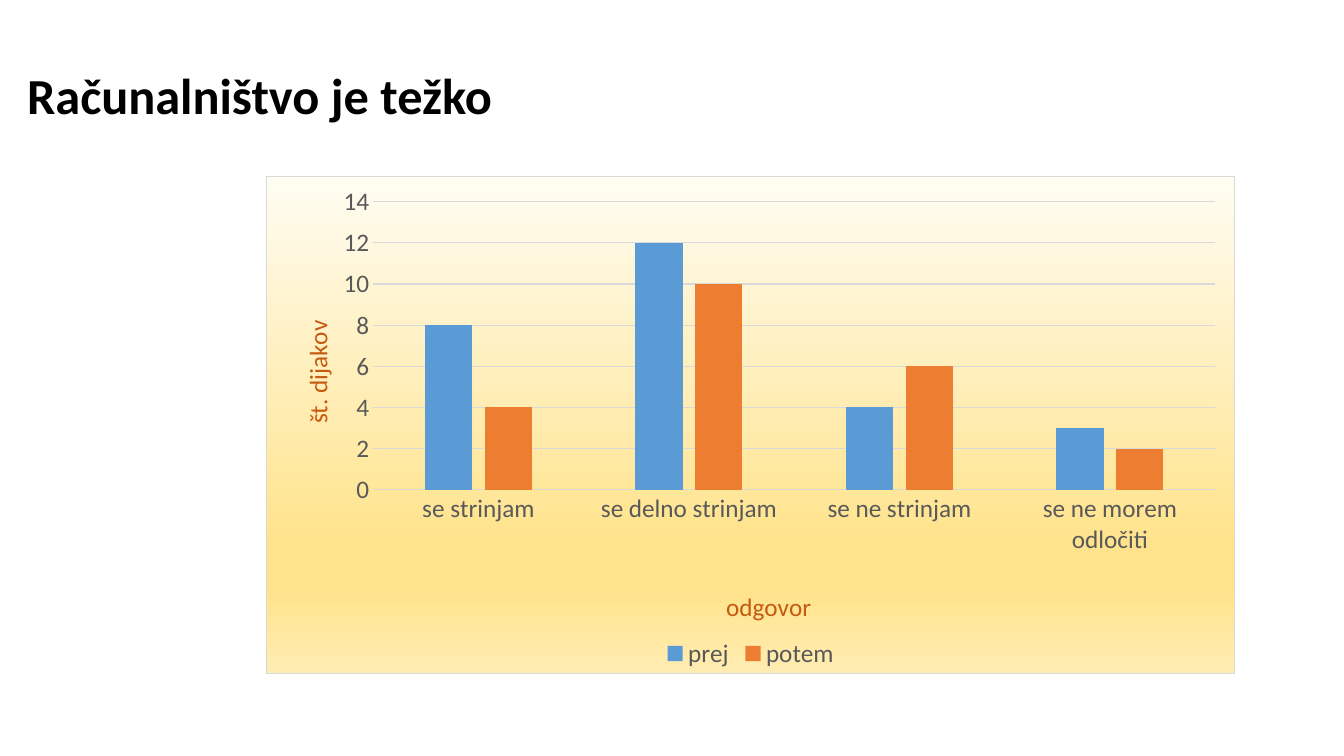
from lxml import etree
from pptx import Presentation
from pptx.chart.data import CategoryChartData
from pptx.dml.color import RGBColor
from pptx.enum.chart import XL_CHART_TYPE as ChartType, XL_LEGEND_POSITION as LegendPosition
from pptx.enum.chart import XL_TICK_MARK as TickMark
from pptx.enum.text import MSO_ANCHOR as Anchor
from pptx.oxml import parse_xml
from pptx.oxml.ns import nsdecls
from pptx.util import Inches, Pt

COLORS = {
    "title": "000000", "label": "595959", "axis_title": "C55A11", "line": "D9D9D9",
    "prej": "5B9BD5", "potem": "ED7D31",
}
BACKGROUND_STOPS = [(0, "FFFCF2"), (74, "FFE38C"), (83, "FFE38C"), (100, "FFECB2")]
FONT = "Calibri"


def style_font(font, size, color):
    font.name, font.size = FONT, Pt(size)
    font.color.rgb = RGBColor.from_string(COLORS[color])


def manual_layout(target="", **shares):
    """Layout whose lengths are shares of the chart's size."""
    modes = "".join(f'<c:{side}Mode val="edge"/>' for side in "xy")
    lengths = "".join(f'<c:{name} val="{share}"/>' for name, share in shares.items())
    return parse_xml(f'<c:layout {nsdecls("c")}><c:manualLayout>{target}{modes}{lengths}'
                     '</c:manualLayout></c:layout>')


presentation = Presentation()
presentation.slide_width, presentation.slide_height = Inches(13.33), Inches(7.5)
slide = presentation.slides.add_slide(presentation.slide_layouts[6])

# Title
title = slide.shapes.add_textbox(Inches(0.17), Inches(0.17), Inches(12.99), Inches(1.12))
title.text_frame.word_wrap = True
title.text_frame.vertical_anchor = Anchor.BOTTOM
paragraph = title.text_frame.paragraphs[0]
paragraph.text = "Računalništvo je težko"
paragraph.line_spacing = 0.9
style_font(paragraph.font, 36, "title")
paragraph.font.bold = True

# Chart
data = CategoryChartData()
data.categories = ["se strinjam", "se delno strinjam", "se ne strinjam", "se ne morem odločiti"]
data.add_series("prej", [8, 12, 4, 3])
data.add_series("potem", [4, 10, 6, 2])
chart = slide.shapes.add_chart(ChartType.COLUMN_CLUSTERED, Inches(2.64), Inches(1.75),
                               Inches(9.61), Inches(4.94), data).chart
chart.has_title = False
style_font(chart.font, 10, "title")

# Columns
plot = chart.plots[0]
plot.gap_width, plot.overlap = 219, -27
plot.vary_by_categories = False
for series in plot.series:
    series.format.fill.solid()
    series.format.fill.fore_color.rgb = RGBColor.from_string(COLORS[series.name])

# Axes and their titles
category_axis, value_axis = chart.category_axis, chart.value_axis
axes = [(category_axis, "odgovor", 0.47, 0.82), (value_axis, "št. dijakov", 0.03, 0.28)]
for axis, caption, left, top in axes:
    axis.major_tick_mark = axis.minor_tick_mark = TickMark.NONE
    style_font(axis.tick_labels.font, 18, "label")
    axis_title = axis.axis_title
    caption_paragraph = axis_title.text_frame.paragraphs[0]
    caption_paragraph.text = caption
    style_font(caption_paragraph.font, 18, "axis_title")
    caption_paragraph.font.bold = False
    title_element = axis.axis_title._element
    for layout in title_element.findall("{*}layout"):
        title_element.remove(layout)
    title_element.find("{*}tx").addnext(manual_layout(x=left, y=top))

value_axis.minimum_scale, value_axis.maximum_scale, value_axis.major_unit = 0, 14, 2
value_axis.has_major_gridlines = True
value_axis.format.line.fill.background()
for line in (category_axis.format.line, value_axis.major_gridlines.format.line):
    line.width = Pt(0.75)
    line.color.rgb = RGBColor.from_string(COLORS["line"])

# Legend
chart.has_legend = True
chart.legend.position = LegendPosition.BOTTOM
chart.legend.include_in_layout = False
style_font(chart.legend.font, 18, "label")

# Plot area
chart_element = chart._chartSpace.find("{*}chart")
plot_area = chart_element.find("{*}plotArea")
for layout in plot_area.findall("{*}layout"):
    plot_area.remove(layout)
plot_area.insert(0, manual_layout('<c:layoutTarget val="inner"/>', x=0.11, y=0.05, w=0.87, h=0.58))

# Gradient background and border
background = parse_xml(f'<c:spPr {nsdecls("c", "a")}><a:gradFill><a:gsLst/><a:lin ang="5400000"/>'
                       f'</a:gradFill><a:ln w="{Pt(0.75)}"><a:solidFill>'
                       f'<a:srgbClr val="{COLORS["line"]}"/></a:solidFill></a:ln></c:spPr>')
stop_list = background.find(".//{*}gsLst")
namespace = etree.QName(stop_list).namespace
for position, color in BACKGROUND_STOPS:
    stop = etree.SubElement(stop_list, f"{{{namespace}}}gs", pos=str(position * 1000))
    etree.SubElement(stop, f"{{{namespace}}}srgbClr", val=color)
chart_element.addnext(background)

presentation.save("out.pptx")
